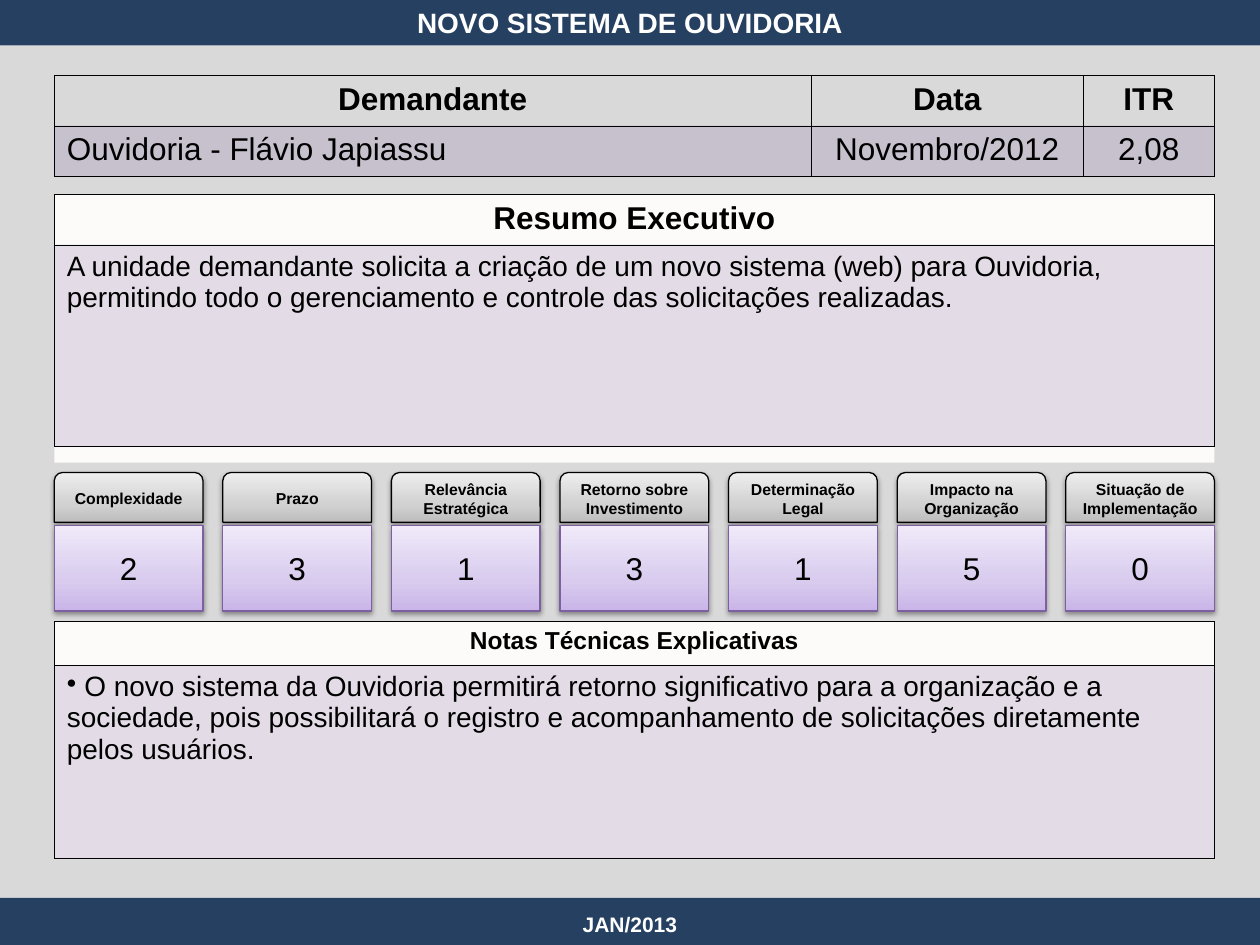
from dataclasses import dataclass

from lxml.etree import Element, SubElement
from pptx import Presentation
from pptx.dml.color import RGBColor
from pptx.enum.shapes import MSO_SHAPE
from pptx.enum.text import MSO_ANCHOR, PP_ALIGN
from pptx.oxml.ns import qn
from pptx.util import Pt


@dataclass(frozen=True)
class Theme:
    font: str = "Arial"
    navy: str = "254061"
    backdrop: str = "D9D9D9"
    paper: str = "FCFBF9"
    purple: str = "8064A2"
    purple_line: str = "7D60A0"
    black: str = "000000"
    white: str = "FFFFFF"
    label_stops: tuple = ((0, "BDBDBD"), (35, "D1D1D1"), (100, "EEEEEE"))
    score_stops: tuple = ((0, "C9B5E8"), (35, "D8CBEE"), (100, "F0EAF9"))
    heading: int = 18
    body: int = 16
    subheading: int = 14
    footer: int = 12
    label: int = 9


THEME = Theme()
LEFT, WIDTH = 31, 663
CARD_WIDTH = 85
SCORES = [
    ("Complexidade", "2"),
    ("Prazo", "3"),
    ("Relevância Estratégica", "1"),
    ("Retorno sobre Investimento", "3"),
    ("Determinação Legal", "1"),
    ("Impacto na Organização", "5"),
    ("Situação de Implementação", "0"),
]


def color(code):
    return RGBColor.from_string(code)


def build_shadow(blur, distance, angle, opacity):
    effects = Element(qn("a:effectLst"))
    outer = SubElement(effects, qn("a:outerShdw"), blurRad=str(Pt(blur)), dist=str(Pt(distance)),
                       dir=str(angle * 60000), algn="tl", rotWithShape="0")
    tint = SubElement(outer, qn("a:srgbClr"), val=THEME.black)
    SubElement(tint, qn("a:alpha"), val=str(opacity * 1000))
    return effects


def write(frame, text, *, size, bold=False, ink=THEME.black, align=PP_ALIGN.CENTER,
          bullet=None, shadow=False):
    paragraph = frame.paragraphs[0]
    paragraph.alignment = align
    if bullet:
        properties = paragraph._p.get_or_add_pPr()
        properties.set("marL", "0")
        properties.set("indent", "0")
        SubElement(properties, qn("a:buChar"), char=bullet)
    run = paragraph.add_run()
    run.text = text
    font = run.font
    font.name, font.size, font.bold = THEME.font, Pt(size), bold
    font.color.rgb = color(ink)
    if shadow:
        fill = run._r.get_or_add_rPr().find(qn("a:solidFill"))
        fill.addnext(build_shadow(3, 3, 45, 43))


def add_block(slide, left, top, width, height, fill):
    block = slide.shapes.add_shape(MSO_SHAPE.RECTANGLE, Pt(left), Pt(top), Pt(width), Pt(height))
    block.shadow.inherit = False
    block.fill.solid()
    block.fill.fore_color.rgb = color(fill)
    block.line.fill.background()


def add_caption(slide, top, height, text, size):
    caption = slide.shapes.add_textbox(Pt(0), Pt(top), Pt(720), Pt(height))
    frame = caption.text_frame
    frame.word_wrap = True
    frame.vertical_anchor = MSO_ANCHOR.MIDDLE
    write(frame, text, size=size, bold=True, ink=THEME.white, shadow=True)


def style_cell(cell, shaded):
    if shaded:
        cell.fill.solid()
        cell.fill.fore_color.rgb = color(THEME.purple)
        tint = cell._tc.tcPr.find(qn("a:solidFill"))[0]
        SubElement(tint, qn("a:alpha"), val="20000")
    else:
        cell.fill.background()
    properties = cell._tc.get_or_add_tcPr()
    for position, side in enumerate(("lnL", "lnR", "lnT", "lnB")):
        border = SubElement(properties, qn(f"a:{side}"), w=str(Pt(0.25)))
        SubElement(SubElement(border, qn("a:solidFill")), qn("a:srgbClr"), val=THEME.black)
        properties.insert(position, border)


def add_grid(slide, top, columns, heights, rows):
    grid = slide.shapes.add_table(len(rows), len(columns), Pt(LEFT), Pt(top),
                                  Pt(WIDTH), Pt(sum(heights))).table
    grid.first_row = grid.horz_banding = False
    for column, width in zip(grid.columns, columns):
        column.width = Pt(width)
    for index, (row, height, entries) in enumerate(zip(grid.rows, heights, rows)):
        row.height = Pt(height)
        for cell, (text, style) in zip(row.cells, entries):
            style_cell(cell, shaded=index > 0)
            write(cell.text_frame, text, **style)


def add_card(slide, preset, left, top, height, text, stops, outline, **style):
    card = slide.shapes.add_shape(preset, Pt(left), Pt(top), Pt(CARD_WIDTH), Pt(height))
    card.fill.gradient()
    card.fill.gradient_angle = 90
    properties = card._element.spPr
    stop_list = properties.find(qn("a:gradFill")).find(qn("a:gsLst"))
    stop_list.clear()
    for position, shade in stops:
        stop = SubElement(stop_list, qn("a:gs"), pos=str(position * 1000))
        SubElement(stop, qn("a:srgbClr"), val=shade)
    card.line.color.rgb = color(outline)
    card.line.width = Pt(0.75)
    properties.append(build_shadow(3.1, 1.6, 90, 38))
    frame = card.text_frame
    frame.word_wrap = True
    frame.vertical_anchor = MSO_ANCHOR.MIDDLE
    write(frame, text, **style)


def add_scores(slide):
    pitch = (WIDTH - CARD_WIDTH) / (len(SCORES) - 1)
    for index, (criterion, score) in enumerate(SCORES):
        left = LEFT + index * pitch
        add_card(slide, MSO_SHAPE.ROUND_2_SAME_RECTANGLE, left, 270, 28.4, criterion,
                 THEME.label_stops, THEME.black, size=THEME.label, bold=True)
        add_card(slide, MSO_SHAPE.RECTANGLE, left, 300.2, 49, score,
                 THEME.score_stops, THEME.purple_line, size=THEME.heading)


def main():
    deck = Presentation()
    deck.slide_width, deck.slide_height = Pt(720), Pt(540)
    slide = deck.slides.add_slide(deck.slide_layouts[6])

    add_block(slide, 0, 26, 720, 493, THEME.backdrop)
    add_block(slide, 0, 513, 720, 27, THEME.navy)
    add_block(slide, 0, 0, 720, 26, THEME.navy)
    add_caption(slide, 515, 26, "JAN/2013", THEME.footer)
    add_block(slide, LEFT, 111, WIDTH, 153.4, THEME.paper)
    add_caption(slide, -7, 40, "NOVO SISTEMA DE OUVIDORIA", THEME.body)

    heading = dict(size=THEME.heading, bold=True)
    value = dict(size=THEME.heading)
    prose = dict(size=THEME.body, align=PP_ALIGN.LEFT)
    add_grid(slide, 43, (432.5, 155.5, 75), (28.7, 28.7), [
        [("Demandante", heading), ("Data", heading), ("ITR", heading)],
        [("Ouvidoria - Flávio Japiassu", dict(value, align=PP_ALIGN.LEFT)),
         ("Novembro/2012", value), ("2,08", value)],
    ])
    add_grid(slide, 111, (WIDTH,), (27.4, 115.4), [
        [("Resumo Executivo", heading)],
        [("A unidade demandante solicita a criação de um novo sistema (web) para Ouvidoria, "
          "permitindo todo o gerenciamento e controle das solicitações realizadas.", prose)],
    ])
    add_block(slide, LEFT, 355, WIDTH, 136, THEME.paper)
    add_grid(slide, 355, (WIDTH,), (25.2, 110.3), [
        [("Notas Técnicas Explicativas", dict(size=THEME.subheading, bold=True))],
        [(" O novo sistema da Ouvidoria permitirá retorno significativo para a organização e a "
          "sociedade, pois possibilitará o registro e acompanhamento de solicitações diretamente "
          "pelos usuários.", dict(prose, bullet="•"))],
    ])
    add_scores(slide)
    deck.save("out.pptx")


if __name__ == "__main__":
    main()
